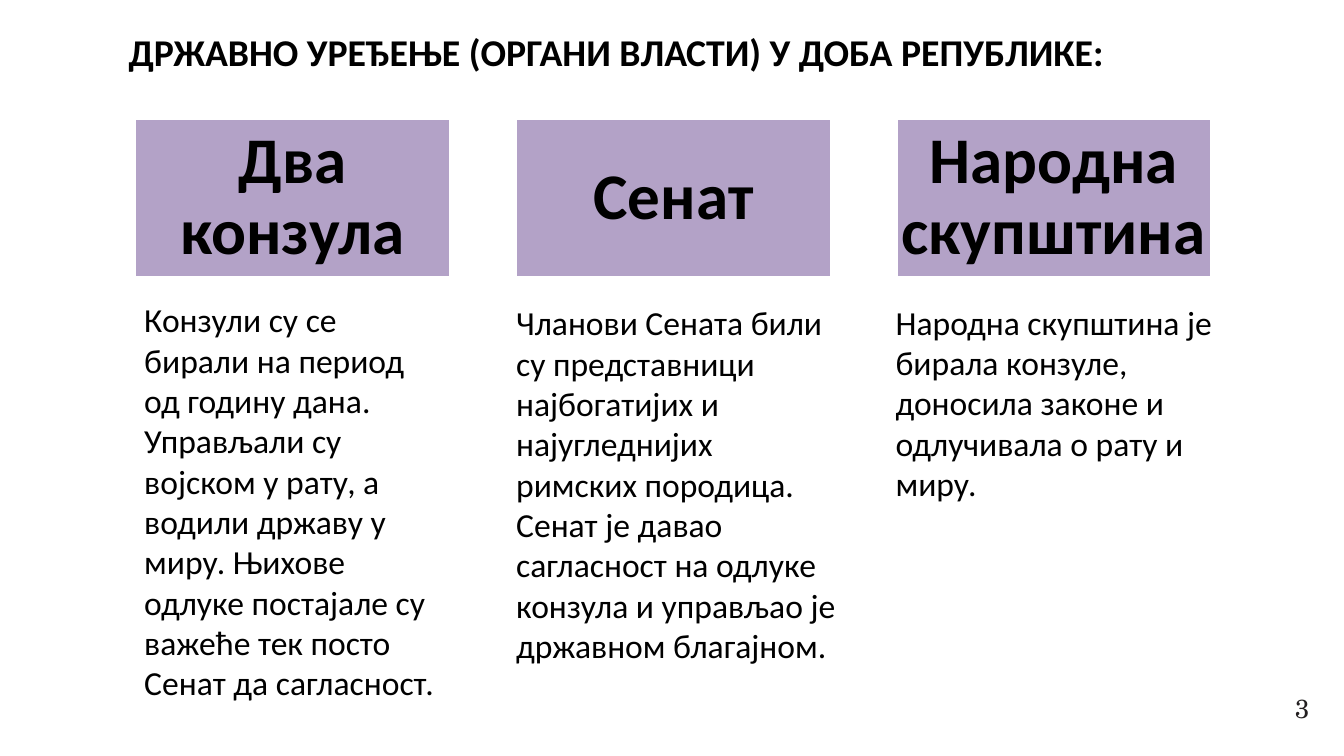
from dataclasses import dataclass

from pptx import Presentation
from pptx.dml.color import RGBColor
from pptx.enum.shapes import MSO_SHAPE
from pptx.enum.text import MSO_ANCHOR, MSO_AUTO_SIZE, PP_ALIGN
from pptx.slide import Slide
from pptx.text.text import TextFrame
from pptx.util import Inches, Pt

COLORS = {
    "heading": "B3A2C7",
    "border": "FFFFFF",
    "text": "000000",
    "number": "231F20",
}
HEAD_LEFT, HEAD_STEP = 1.79, 5.035
HEAD_TOP, HEAD_WIDTH, HEAD_HEIGHT = 1.58, 4.16, 2.08


@dataclass
class Organ:
    name: str
    duties: str
    left: float
    top: float
    width: float
    height: float


ORGANS = [
    Organ("Два конзула",
          "Конзули су се бирали на период од годину дана. Управљали су војском "
          "у рату, а водили државу у миру. Њихове одлуке постајале су важеће "
          "тек посто Сенат да сагласност.",
          1.81, 3.91, 4.08, 5.49),
    Organ("Сенат",
          "Чланови Сената били су представници најбогатијих и најугледнијих "
          "римских породица. Сенат је давао сагласност на одлуке конзула и "
          "управљао је државном благајном.",
          6.73, 3.95, 4.5, 4.95),
    Organ("Народна скупштина",
          "Народна скупштина је бирала конзуле, доносила законе и одлучивала "
          "о рату и миру.",
          11.75, 3.94, 4.5, 2.79),
]


def rgb(name: str) -> RGBColor:
    return RGBColor.from_string(COLORS[name])


def write(tf: TextFrame, text: str, size: float, bold: bool = False,
          align: PP_ALIGN = PP_ALIGN.LEFT, anchor: MSO_ANCHOR = MSO_ANCHOR.TOP,
          font: str = "Calibri", color: str = "text") -> None:
    tf.word_wrap = True
    tf.auto_size = MSO_AUTO_SIZE.NONE
    tf.vertical_anchor = anchor
    p = tf.paragraphs[0]
    p.text = text
    p.alignment = align
    p.font.name = font
    p.font.size = Pt(size)
    p.font.bold = bold
    p.font.color.rgb = rgb(color)


def add_title(slide: Slide, text: str) -> None:
    sp = slide.shapes.title
    sp.left, sp.top = Inches(1.6), Inches(0.33)
    sp.width, sp.height = Inches(14.34), Inches(1.02)
    write(sp.text_frame, text, 36, bold=True)


def add_heading(slide: Slide, text: str, left: float) -> None:
    sp = slide.shapes.add_shape(MSO_SHAPE.RECTANGLE, Inches(left), Inches(HEAD_TOP),
                                Inches(HEAD_WIDTH), Inches(HEAD_HEIGHT))
    sp.shadow.inherit = False
    sp.fill.solid()
    sp.fill.fore_color.rgb = rgb("heading")
    sp.line.color.rgb = rgb("border")
    sp.line.width = Pt(2)
    tf = sp.text_frame
    tf.margin_left = tf.margin_top = tf.margin_right = tf.margin_bottom = Inches(0.04)
    write(tf, text, 62, bold=True, align=PP_ALIGN.CENTER, anchor=MSO_ANCHOR.MIDDLE)
    tf.paragraphs[0].line_spacing = 0.9


def add_duties(slide: Slide, organ: Organ) -> None:
    sp = slide.shapes.add_textbox(Inches(organ.left), Inches(organ.top),
                                  Inches(organ.width), Inches(organ.height))
    write(sp.text_frame, organ.duties, 32)
    sp.text_frame.auto_size = MSO_AUTO_SIZE.SHAPE_TO_FIT_TEXT


def add_number(slide: Slide, text: str) -> None:
    sp = slide.shapes.add_textbox(Inches(16.23), Inches(9.17), Inches(1.19), Inches(0.4))
    write(sp.text_frame, text, 25, align=PP_ALIGN.RIGHT, anchor=MSO_ANCHOR.MIDDLE,
          font="TeX Gyre Schola", color="number")


def main() -> None:
    prs = Presentation()
    prs.slide_width, prs.slide_height = Inches(17.78), Inches(10)
    slide = prs.slides.add_slide(prs.slide_layouts[5])
    add_title(slide, "ДРЖАВНО УРЕЂЕЊЕ (ОРГАНИ ВЛАСТИ) У ДОБА РЕПУБЛИКЕ:")
    for i, organ in enumerate(ORGANS):
        add_heading(slide, organ.name, round(HEAD_LEFT + i * HEAD_STEP, 2))
        add_duties(slide, organ)
    add_number(slide, "3")
    prs.save("out.pptx")


if __name__ == "__main__":
    main()
